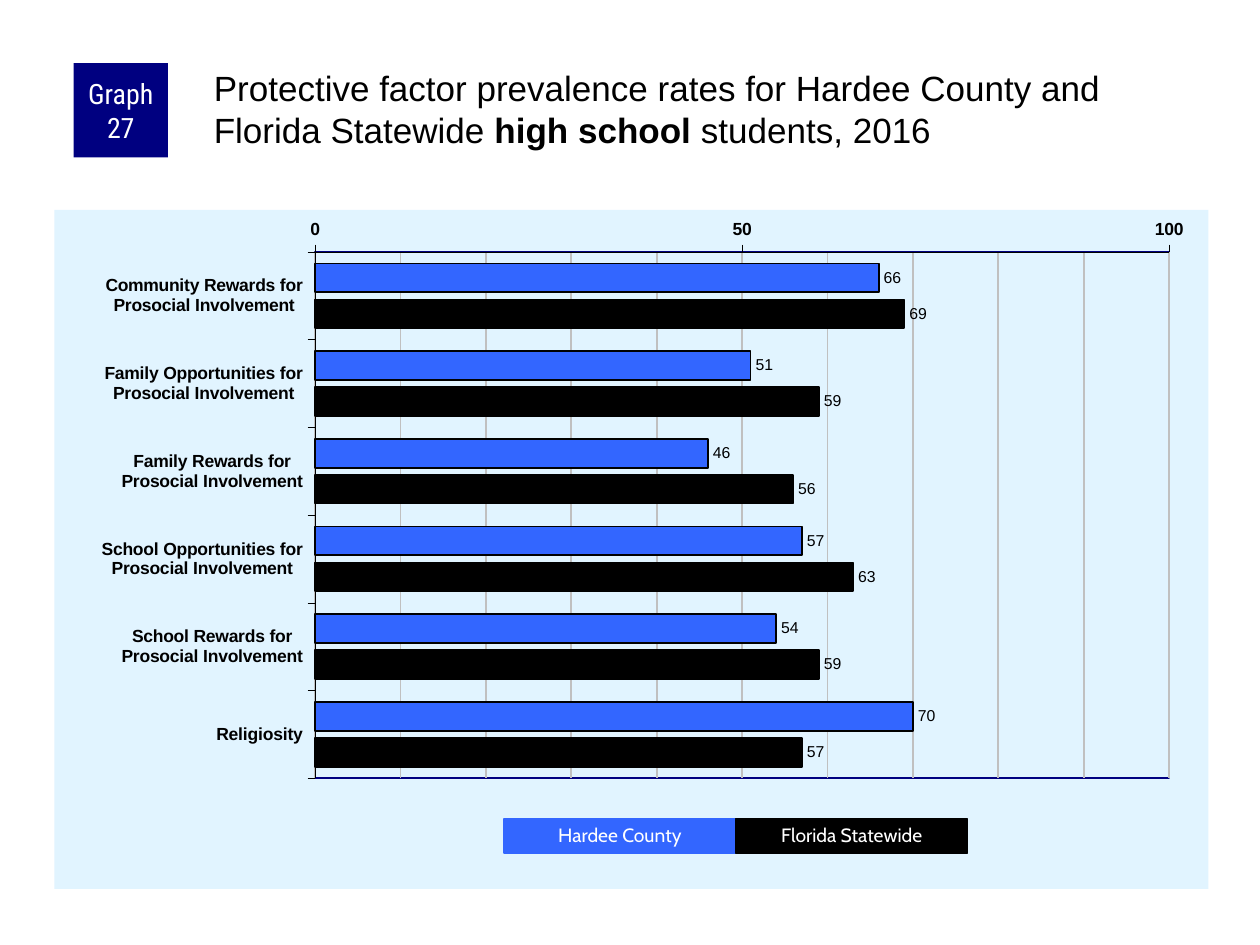
from copy import deepcopy
from dataclasses import dataclass

from lxml import etree
from pptx import Presentation
from pptx import util as u
from pptx.chart import data as cd
from pptx.dml.color import RGBColor
from pptx.enum import chart as ec, shapes, text
from pptx.oxml import parse_xml
from pptx.oxml.ns import nsdecls, qn


@dataclass(frozen=True)
class Theme:
    black: str = "000000"
    white: str = "FFFFFF"
    navy: str = "000080"
    blue: str = "3366FF"
    panel: str = "E1F4FF"
    grid: str = "C0C0C0"
    body: str = "Arial"
    badge: str = "Roboto Condensed"
    key: str = "Cabin"
    title_size: float = 20
    badge_size: float = 16
    key_size: float = 11
    axis_size: float = 10
    label_size: float = 9


@dataclass(frozen=True)
class Box:
    left: float
    top: float
    width: float
    height: float

    def emu(self) -> tuple:
        return tuple(u.Pt(v) for v in (self.left, self.top, self.width, self.height))


@dataclass(frozen=True)
class Group:
    name: str
    color: str
    rates: tuple


T = Theme()
FACTORS = (
    "Community Rewards for\nProsocial Involvement",
    "Family Opportunities for\nProsocial Involvement",
    "Family Rewards for\nProsocial Involvement",
    "School Opportunities for\nProsocial Involvement",
    "School Rewards for\nProsocial Involvement",
    "Religiosity",
)
GROUPS = (
    Group("Hardee County", T.blue, (66, 51, 46, 57, 54, 70)),
    Group("Florida Statewide", T.black, (69, 59, 56, 63, 59, 57)),
)
PLOT = {"x": 0.226, "y": 0.062, "w": 0.74, "h": 0.775}
KEY = Box(288, 468, 132.5, 19.5)


def rgb(color: str) -> RGBColor:
    return RGBColor.from_string(color)


def style_font(font, size: float, color: str, name: str, bold: bool = False) -> None:
    font.size, font.name, font.bold = u.Pt(size), name, bold
    font.color.rgb = rgb(color)


def style_line(line, color: str, width: float) -> None:
    line.color.rgb = rgb(color)
    line.width = u.Pt(width)


def add_text(p, content: str, *, size: float, color: str, name: str, bold: bool = False) -> None:
    r = p.add_run()
    r.text = content
    style_font(r.font, size, color, name, bold)


def add_block(s, box: Box, fill: str, content: str, *, size: float, name: str,
              inset: float = 0, outline: float = 0, spacing: float = 1) -> None:
    sp = s.shapes.add_shape(shapes.MSO_SHAPE.RECTANGLE, *box.emu())
    sp.shadow.inherit = False
    sp.fill.solid()
    sp.fill.fore_color.rgb = rgb(fill)
    if outline:
        style_line(sp.line, fill, outline)
    else:
        sp.line.fill.background()
    tf = sp.text_frame
    tf.word_wrap = True
    tf.vertical_anchor = text.MSO_ANCHOR.MIDDLE
    tf.margin_left = tf.margin_right = u.Pt(inset)
    tf.margin_top = tf.margin_bottom = 0
    p = tf.paragraphs[0]
    p.alignment = text.PP_ALIGN.CENTER
    p.line_spacing = spacing
    add_text(p, content, size=size, color=T.white, name=name)


def add_title(s, box: Box) -> None:
    tf = s.shapes.add_textbox(*box.emu()).text_frame
    tf.word_wrap = True
    tf.margin_left = tf.margin_top = u.Pt(2.2)
    tf.margin_right = tf.margin_bottom = 0
    p = tf.paragraphs[0]
    for content, bold in (
        ("Protective factor prevalence rates for Hardee County and Florida Statewide ", False),
        ("high school ", True),
        ("students, 2016", False),
    ):
        add_text(p, content, size=T.title_size, color=T.black, name=T.body, bold=bold)


def frame_chart(chart) -> None:
    ns = nsdecls("c", "a")
    chart.element.find(qn("c:chart")).addnext(parse_xml(
        f'<c:spPr {ns}><a:solidFill><a:srgbClr val="{T.panel}"/></a:solidFill>'
        "<a:ln><a:noFill/></a:ln></c:spPr>"))
    area = chart.element.find(qn("c:chart")).find(qn("c:plotArea"))
    for old in area.findall(qn("c:layout")):
        area.remove(old)
    layout = parse_xml(f'<c:layout {ns}><c:manualLayout><c:layoutTarget val="inner"/>'
                       '<c:xMode val="edge"/><c:yMode val="edge"/></c:manualLayout></c:layout>')
    for key, value in PLOT.items():
        etree.SubElement(layout[0], qn(f"c:{key}")).set("val", str(value))
    area.insert(0, layout)
    area.append(parse_xml(
        f'<c:spPr {ns}><a:noFill/><a:ln w="{u.Pt(1)}"><a:solidFill>'
        f'<a:srgbClr val="{T.navy}"/></a:solidFill></a:ln></c:spPr>'))


def style_grid(chart) -> None:
    val = chart.value_axis
    val.has_major_gridlines = val.has_minor_gridlines = True
    style_line(val.major_gridlines.format.line, T.grid, 1)
    major = next(chart.element.iter(qn("c:majorGridlines")))
    minor = next(chart.element.iter(qn("c:minorGridlines")))
    minor.append(deepcopy(major.find(qn("c:spPr"))))


def add_rates_chart(s, box: Box) -> None:
    data = cd.CategoryChartData()
    data.categories = FACTORS
    for group in GROUPS:
        data.add_series(group.name, group.rates)
    chart = s.shapes.add_chart(ec.XL_CHART_TYPE.BAR_CLUSTERED, *box.emu(), data).chart
    chart.has_legend = chart.has_title = False
    style_font(chart.font, T.axis_size, T.black, T.body)
    frame_chart(chart)

    plot = chart.plots[0]
    plot.gap_width, plot.overlap, plot.vary_by_categories = 80, -25, False
    for series, group in zip(plot.series, GROUPS):
        series.format.fill.solid()
        series.format.fill.fore_color.rgb = rgb(group.color)
        style_line(series.format.line, T.black, 1)
        labels = series.data_labels
        labels.show_value = True
        labels.position = ec.XL_LABEL_POSITION.OUTSIDE_END
        style_font(labels.font, T.label_size, T.black, T.body)

    cat, val = chart.category_axis, chart.value_axis
    for axis in (cat, val):
        axis.major_tick_mark = ec.XL_TICK_MARK.OUTSIDE
        axis.minor_tick_mark = ec.XL_TICK_MARK.NONE
        style_font(axis.tick_labels.font, T.axis_size, T.black, T.body, True)
        style_line(axis.format.line, T.black, 0.25)
    cat.has_major_gridlines = False
    cat.reverse_order = True
    cat.crosses = ec.XL_AXIS_CROSSES.MAXIMUM
    val.minimum_scale, val.maximum_scale, val.major_unit, val.minor_unit = 0, 100, 50, 10
    style_grid(chart)


def main() -> None:
    prs = Presentation()
    prs.slide_width, prs.slide_height = u.Pt(720), u.Pt(540)
    s = prs.slides.add_slide(prs.slide_layouts[6])
    add_rates_chart(s, Box(31, 120, 659.5, 388))
    add_block(s, Box(42, 36, 54, 54), T.navy, "Graph 27",
              size=T.badge_size, name=T.badge, inset=3.6)
    add_title(s, Box(120, 36, 570, 60))
    for i, group in enumerate(GROUPS):
        add_block(s, Box(KEY.left + i * KEY.width, KEY.top, KEY.width, KEY.height), group.color,
                  group.name, size=T.key_size, name=T.key, outline=0.75, spacing=0.9)
    prs.save("out.pptx")


if __name__ == "__main__":
    main()
